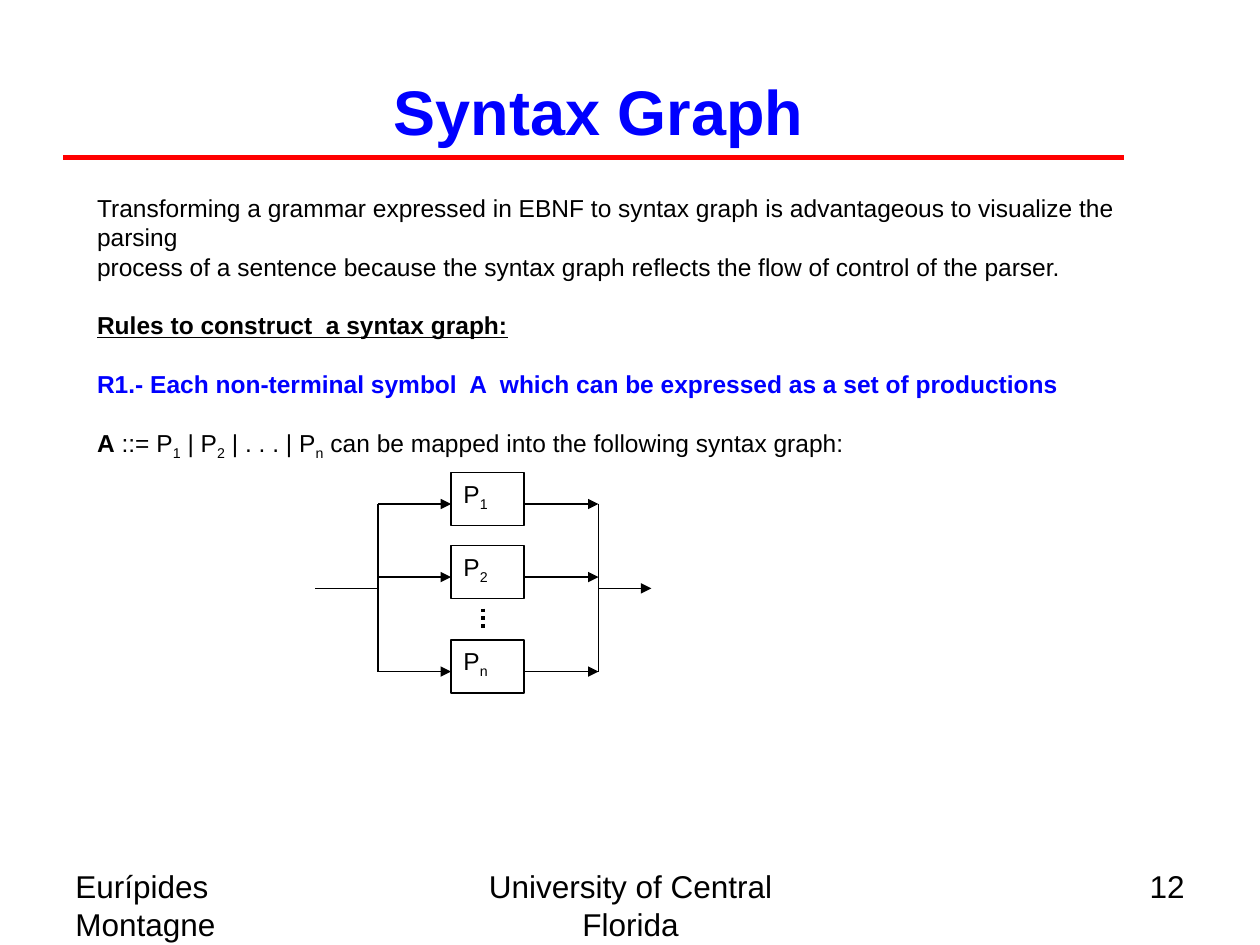
from lxml import etree
from pptx import Presentation
from pptx.dml.color import RGBColor
from pptx.enum.dml import MSO_LINE
from pptx.enum.shapes import MSO_CONNECTOR, MSO_SHAPE
from pptx.enum.text import MSO_ANCHOR, MSO_AUTO_SIZE, PP_ALIGN
from pptx.oxml.ns import qn
from pptx.util import Inches, Pt

LEFT, CENTER, RIGHT = PP_ALIGN.LEFT, PP_ALIGN.CENTER, PP_ALIGN.RIGHT
TOP, MIDDLE = MSO_ANCHOR.TOP, MSO_ANCHOR.MIDDLE
STRAIGHT, RECTANGLE = MSO_CONNECTOR.STRAIGHT, MSO_SHAPE.RECTANGLE
DOTTED, NO_AUTOFIT = MSO_LINE.ROUND_DOT, MSO_AUTO_SIZE.NONE
BLACK, BLUE, RED = "000000", "0000FF", "FF0000"
TITLE_AND_BODY = 1


def rgb(color):
    return RGBColor.from_string(color)


class SlideBuilder:
    font_name = "Arial"
    body_size = 14
    footer_size = 18
    title_size = 36
    thin = 0.75

    def __init__(self, presentation):
        layout = presentation.slide_layouts[TITLE_AND_BODY]
        self.slide = presentation.slides.add_slide(layout)

    def place(self, shape, left, top, width, height):
        shape.left, shape.top = Inches(left), Inches(top)
        shape.width, shape.height = Inches(width), Inches(height)

    def fill_paragraph(self, paragraph, parts, size, color=BLACK, bold=False,
                       underline=False, align=LEFT, space_before=0):
        """Fill a paragraph; every second part is set as a subscript."""
        font = paragraph.font
        font.name, font.size, font.bold = self.font_name, Pt(size), bold
        font.underline = underline
        font.color.rgb = rgb(color)
        paragraph.alignment = align
        paragraph.space_before = Pt(space_before)
        for index, text in enumerate(parts):
            run = paragraph.add_run()
            run.text = text
            if index % 2:
                run.font._element.set("baseline", "-25000")

    def title(self, text, *box):
        shape = self.slide.shapes.title
        self.place(shape, *box)
        shape.text_frame.vertical_anchor = MIDDLE
        self.fill_paragraph(shape.text_frame.paragraphs[0], [text],
                            self.title_size, BLUE, bold=True, align=CENTER)

    def body(self, entries, margin_top, *box):
        shape = self.slide.placeholders[1]
        self.place(shape, *box)
        frame = shape.text_frame
        frame.auto_size, frame.vertical_anchor = NO_AUTOFIT, TOP
        frame.margin_top = Inches(margin_top)
        for index, (parts, style) in enumerate(entries):
            paragraph = frame.add_paragraph() if index else frame.paragraphs[0]
            self.fill_paragraph(paragraph, parts, self.body_size, **style)
            # No bullet and no hanging indent
            properties = paragraph._p.get_or_add_pPr()
            properties.set("marL", "0")
            properties.set("indent", "0")
            bullet = etree.Element(qn("a:buNone"))
            properties.find(qn("a:defRPr")).addprevious(bullet)
        return frame

    def text(self, parts, size, *box, align=LEFT, wrap=True):
        shape = self.slide.shapes.add_textbox(*map(Inches, box))
        shape.text_frame.word_wrap = wrap
        self.fill_paragraph(shape.text_frame.paragraphs[0], parts, size,
                            align=align)

    def box(self, *box):
        shape = self.slide.shapes.add_shape(RECTANGLE, *map(Inches, box))
        shape.shadow.inherit = False
        shape.fill.background()
        shape.line.color.rgb = rgb(BLACK)
        shape.line.width = Pt(self.thin)

    def line(self, *ends, color=BLACK, width=thin, dash=None, arrow=False):
        connector = self.slide.shapes.add_connector(STRAIGHT, *map(Inches, ends))
        connector.line.color.rgb = rgb(color)
        connector.line.width = Pt(width)
        if dash:
            connector.line.dash_style = dash
        properties = connector._element.spPr
        if arrow:
            outline = properties.find(qn("a:ln"))
            etree.SubElement(outline, qn("a:tailEnd"), type="triangle")
        etree.SubElement(properties, qn("a:effectLst"))


def main():
    presentation = Presentation()
    presentation.slide_width, presentation.slide_height = Inches(10), Inches(7.5)
    builder = SlideBuilder(presentation)

    # Footer
    footer_top, footer_height = 6.83, 0.52
    for text, left, width, align in (
        ("Eurípides Montagne", 0.5, 2.33, LEFT),
        ("University of Central Florida", 3.42, 3.17, CENTER),
        ("12", 7.17, 2.33, RIGHT),
    ):
        builder.text([text], builder.footer_size, left, footer_top, width,
                     footer_height, align=align)

    # Title and rule
    builder.title("Syntax Graph", 0.25, 0.25, 9, 1.25)
    builder.line(0.5, 1.25, 8.92, 1.25, color=RED, width=3)

    # Explanation
    gap = {"space_before": 16.8}
    frame = builder.body([
        (["Transforming a grammar expressed in EBNF to syntax graph is "
          "advantageous to visualize the parsing"], {}),
        (["process of a sentence because the syntax graph reflects the flow "
          "of control of the parser."], {}),
        (["Rules to construct  a syntax graph:"],
         {"bold": True, "underline": True, **gap}),
        (["R1.- Each non-terminal symbol  A  which can be expressed as a set "
          "of productions"], {"bold": True, "color": BLUE, **gap}),
        (["A ::= P", "1", " | P", "2", " | . . . | P", "n",
          " can be mapped into the following syntax graph:"], gap),
    ], 0.28, 0.67, 1.25, 8.93, 2.19)
    # The defined symbol stands out in bold
    production = frame.paragraphs[-1]
    first_run = production.runs[0]
    symbol = production.add_run()
    symbol.text, first_run.text = "A", " ::= P"
    symbol.font.bold = True
    first_run._r.addprevious(symbol._r)

    # Syntax graph: one branch for each production
    split, box_left, box_right, join = 3, 3.58, 4.17, 4.75
    box_width, box_height = 0.58, 0.42
    branches = {"1": 4, "2": 4.58, "n": 5.33}
    for subscript, level in branches.items():
        top = level - 0.25
        builder.box(box_left, top, box_width, box_height)
        builder.text(["P", subscript], builder.body_size, box_left, top,
                     0.4, 0.33, wrap=False)
        builder.line(split, level, box_left, level, arrow=True)
        builder.line(box_right, level, join, level, arrow=True)

    # Entry, exit and the verticals that link the branches
    middle = 4.67
    for x in (split, join):
        builder.line(x, branches["1"], x, branches["n"])
    builder.line(2.5, middle, split, middle)
    builder.line(join, middle, 5.17, middle, arrow=True)
    builder.line(3.83, 4.83, 3.83, 5, width=2.25, dash=DOTTED)

    presentation.save("out.pptx")


if __name__ == "__main__":
    main()
